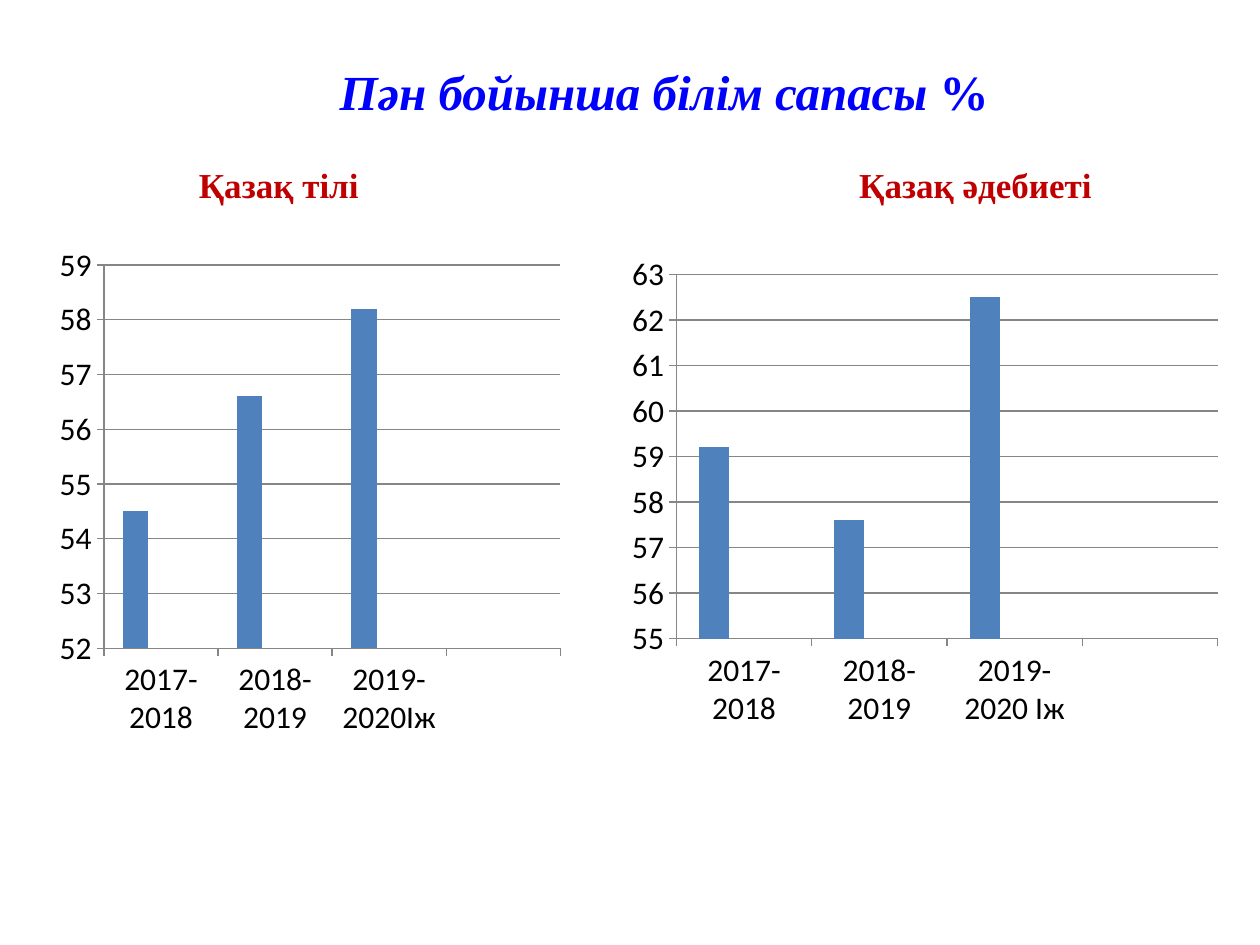
from pptx import Presentation
from pptx.chart.data import CategoryChartData
from pptx.dml.color import RGBColor
from pptx.enum.chart import XL_CHART_TYPE, XL_TICK_MARK
from pptx.enum.text import MSO_ANCHOR, PP_ALIGN
from pptx.util import Inches, Pt

COLUMNS = XL_CHART_TYPE.COLUMN_CLUSTERED
OUTSIDE = XL_TICK_MARK.OUTSIDE
TOP = MSO_ANCHOR.TOP
CENTER = PP_ALIGN.CENTER

TITLE = [("Пән бойынша білім сапасы ", True), ("%", False)]
SERIES_COLORS = ["4F81BD", "C0504D", "9BBB59"]
SUBJECTS = [
    {
        "heading": "Қазақ тілі",
        "heading_at": (1.48, 1.25, 2.27, 0.44),
        "chart_at": (0.39, 1.87, 4.14, 4.06),
        "years": ["2017-2018", "2018-2019", "2019-2020Іж", ""],
        "quality": [54.5, 56.6, 58.2, None],
        "scale": (52, 59),
    },
    {
        "heading": "Қазақ әдебиеті",
        "heading_at": (6.72, 1.25, 2.58, 0.44),
        "chart_at": (4.92, 1.95, 4.84, 3.9),
        "years": ["2017-2018", "2018-2019", "2019-2020 Іж", ""],
        "quality": [59.2, 57.6, 62.5, None],
        "scale": (55, 63),
    },
]


def rgb(hex_color):
    return RGBColor.from_string(hex_color)


def inches(box):
    return [Inches(length) for length in box]


def set_font(font, name, size, color, bold=False):
    font.name = name
    font.size = Pt(size)
    font.color.rgb = rgb(color)
    font.bold = bold


def add_title(slide):
    title = slide.shapes.title
    title.left, title.top, title.width, title.height = inches((1.09, 0.39, 8.36, 1.04))
    frame = title.text_frame
    frame.vertical_anchor = TOP
    frame.margin_top = Inches(0.1)
    paragraph = frame.paragraphs[0]
    paragraph.alignment = CENTER
    set_font(paragraph.font, "Times New Roman", 28, "0000FF", bold=True)
    for text, italic in TITLE:
        run = paragraph.add_run()
        run.text = text
        run.font.italic = italic


def add_heading(slide, subject):
    frame = slide.shapes.add_textbox(*inches(subject["heading_at"])).text_frame
    frame.word_wrap = True
    paragraph = frame.paragraphs[0]
    paragraph.text = subject["heading"]
    set_font(paragraph.font, "Times New Roman", 20, "C00000", bold=True)


def add_quality_chart(slide, subject):
    data = CategoryChartData()
    data.categories = subject["years"]
    empty = [None] * len(subject["years"])
    for number, values in enumerate([subject["quality"], empty, empty], 1):
        data.add_series(f"Series {number}", values)
    chart = slide.shapes.add_chart(COLUMNS, *inches(subject["chart_at"]), data).chart
    chart.has_legend = False
    chart.has_title = False
    set_font(chart.font, "Calibri", 18, "000000")

    plot = chart.plots[0]
    plot.vary_by_categories = False
    plot.gap_width = 150
    plot.overlap = 0
    for series, color in zip(plot.series, SERIES_COLORS):
        series.format.fill.solid()
        series.format.fill.fore_color.rgb = rgb(color)

    value_axis = chart.value_axis
    value_axis.minimum_scale, value_axis.maximum_scale = subject["scale"]
    value_axis.major_unit = 1
    value_axis.has_major_gridlines = True
    value_axis.tick_labels.number_format = "General"
    value_axis.tick_labels.number_format_is_linked = False
    for axis in (chart.category_axis, value_axis):
        axis.major_tick_mark = OUTSIDE
    for part in (chart.category_axis, value_axis, value_axis.major_gridlines):
        part.format.line.color.rgb = rgb("868686")
        part.format.line.width = Pt(0.75)


def main():
    deck = Presentation()
    deck.slide_width, deck.slide_height = inches((10, 7.5))
    slide = deck.slides.add_slide(deck.slide_layouts[5])
    add_title(slide)
    for subject in SUBJECTS:
        add_heading(slide, subject)
    for subject in SUBJECTS:
        add_quality_chart(slide, subject)
    deck.save("out.pptx")


if __name__ == "__main__":
    main()
